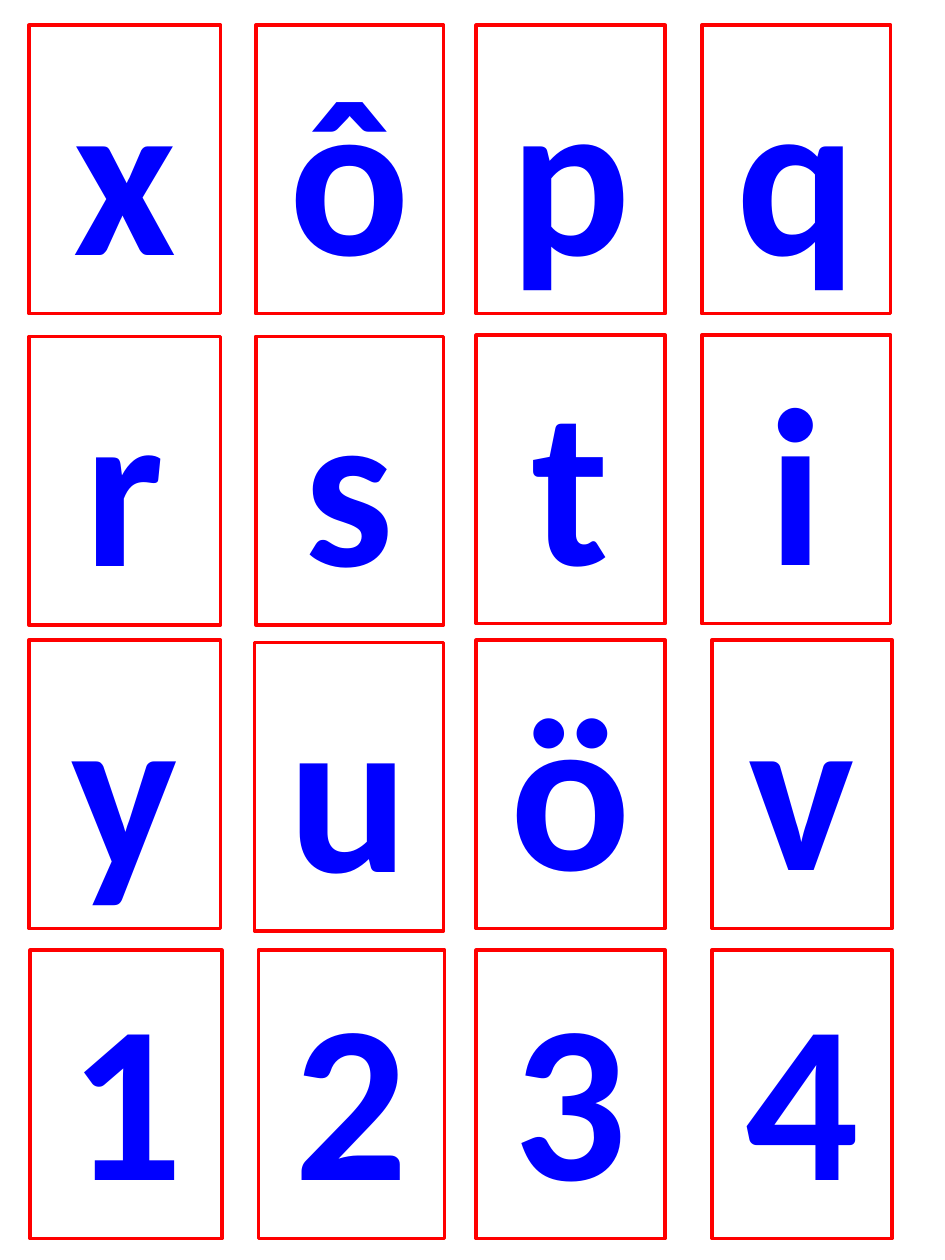
from dataclasses import dataclass

from pptx import Presentation
from pptx.dml.color import RGBColor
from pptx.enum.shapes import MSO_SHAPE
from pptx.enum.text import MSO_ANCHOR, MSO_AUTO_SIZE, PP_ALIGN
from pptx.util import Inches, Pt


@dataclass(frozen=True)
class Theme:
    ink: RGBColor = RGBColor(0x00, 0x00, 0xFF)
    edge: RGBColor = RGBColor(0xFF, 0x00, 0x00)
    font: str = "Calibri"
    size: Pt = Pt(128)
    line: Pt = Pt(2)


THEME = Theme()
ROWS = ["xôpq", "rsti", "yuöv", "1234"]
TOPS = [0.2, 2.66, 5.08, 7.54]
COLS = [(0.23, 1.52), (2.03, 1.49), (3.78, 1.5), (5.57, 1.5)]
HEIGHT = 2.29
# Cards that sit slightly off the grid: left, top, width
MOVED = {
    "r": (0.23, 2.67, 1.52),
    "s": (2.03, 2.67, 1.49),
    "u": (2.02, 5.1, 1.5),
    "v": (5.65, 5.08, 1.43),
    "1": (0.24, 7.54, 1.52),
    "2": (2.05, 7.54, 1.48),
    "4": (5.65, 7.54, 1.43),
}


def add_card(slide, sign, left, top, width, height):
    card = slide.shapes.add_shape(
        MSO_SHAPE.RECTANGLE,
        Inches(left), Inches(top), Inches(width), Inches(height))
    card.shadow.inherit = False
    card.fill.background()
    card.line.color.rgb = THEME.edge
    card.line.width = THEME.line

    frame = card.text_frame
    frame.word_wrap = True
    frame.auto_size = MSO_AUTO_SIZE.SHAPE_TO_FIT_TEXT
    frame.vertical_anchor = MSO_ANCHOR.TOP
    para = frame.paragraphs[0]
    para.text = sign
    para.alignment = PP_ALIGN.CENTER
    font = para.font
    font.name = THEME.font
    font.size = THEME.size
    font.bold = True
    font.color.rgb = THEME.ink


def add_grid(slide):
    for signs, top in zip(ROWS, TOPS):
        for sign, (left, width) in zip(signs, COLS):
            place = MOVED.get(sign, (left, top, width))
            add_card(slide, sign, *place, HEIGHT)


def main():
    deck = Presentation()
    deck.slide_width = Inches(7.5)
    deck.slide_height = Inches(10)
    blank = deck.slide_layouts[6]
    add_grid(deck.slides.add_slide(blank))
    deck.save("out.pptx")


if __name__ == "__main__":
    main()
